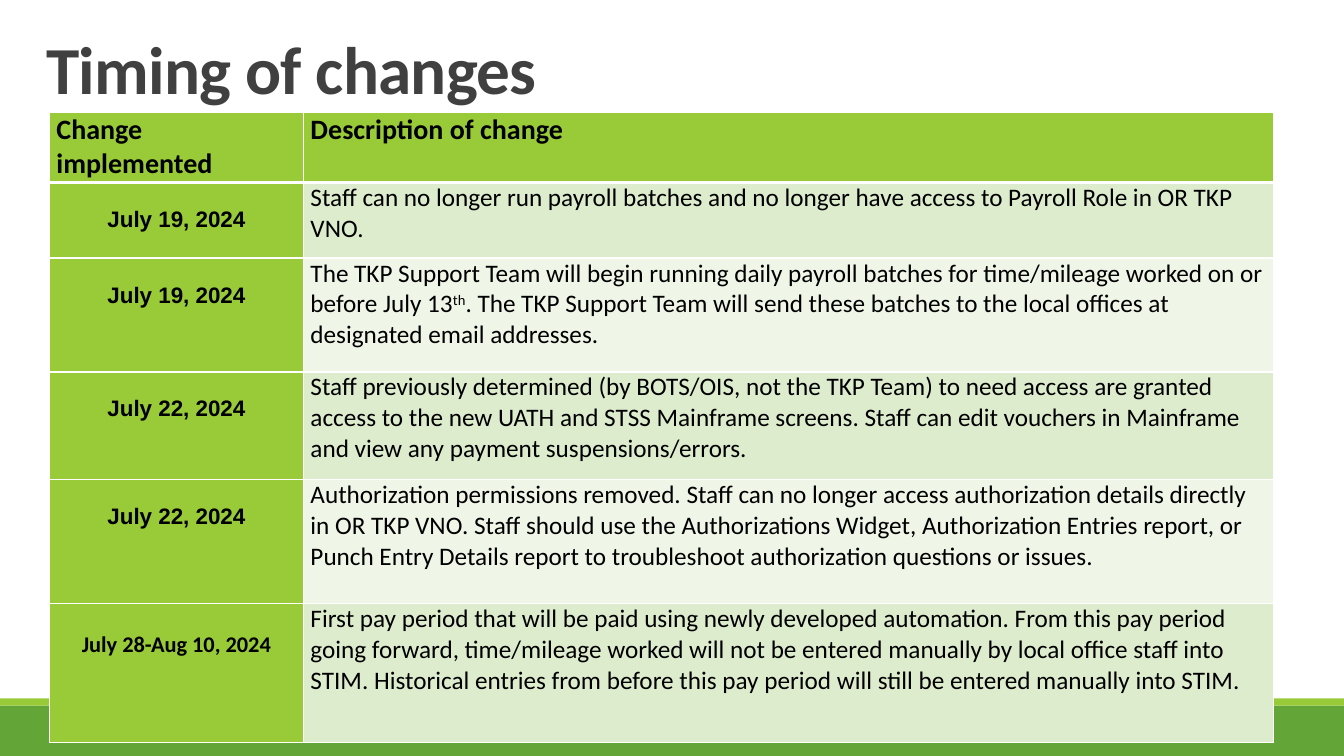
from lxml import etree
from pptx import Presentation
from pptx.dml.color import RGBColor as Rgb
from pptx.enum.shapes import MSO_SHAPE as Shape
from pptx.enum.text import MSO_ANCHOR as Anchor, PP_ALIGN as Align
from pptx.oxml.ns import qn
from pptx.util import Inches, Pt

WIDE, HIGH = 13.33, 7.5
HUES = {
    "lime": "99CB38", "green": "63A537", "pale": "DEECCE", "mist": "EFF6E8",
    "white": "FFFFFF", "black": "000000", "gray": "404040",
}
COLS = [2.52, 9.62]
ROWS = [0.69, 0.75, 1.13, 1.07, 1.23, 1.38]
HEADS = ["Change implemented", "Description of change"]
STEPS = [
    ("July 19, 2024", "Arial", [
        "Staff can no longer run payroll batches and no longer have access to "
        "Payroll Role in OR TKP VNO."]),
    ("July 19, 2024", "Arial", [
        "The TKP Support Team will begin running daily payroll batches for "
        "time/mileage worked on or before July 13",
        "th",
        ". The TKP Support Team will send these batches to the local offices "
        "at designated email addresses."]),
    ("July 22, 2024", "Arial", [
        "Staff previously determined (by BOTS/OIS, not the TKP Team) to need "
        "access are granted access to the new UATH and STSS Mainframe screens. "
        "Staff can edit vouchers in Mainframe and view any payment "
        "suspensions/errors."]),
    ("July 22, 2024", "Arial", [
        "Authorization permissions removed. Staff can no longer access "
        "authorization details directly in OR TKP VNO. Staff should use the "
        "Authorizations Widget, Authorization Entries report, or Punch Entry "
        "Details report to troubleshoot authorization questions or issues."]),
    ("July 28-Aug 10, 2024", "Calibri", [
        "First pay period that will be paid using newly developed automation. "
        "From this pay period going forward, time/mileage worked will not be "
        "entered manually by local office staff into STIM. Historical entries "
        "from before this pay period will still be entered manually into STIM."]),
]


def hue(name):
    return Rgb.from_string(HUES[name])


def place(box):
    return [Inches(n) for n in box]


def say(par, text, size, bold=False, face="Calibri", tone="black"):
    run = par.add_run()
    run.text = text
    font = run.font
    font.size, font.bold, font.name = Pt(size), bold, face
    font.color.rgb = hue(tone)
    return run


def add_band(slide, box, tone):
    band = slide.shapes.add_shape(Shape.RECTANGLE, *place(box))
    band.shadow.inherit = False
    band.fill.solid()
    band.fill.fore_color.rgb = hue(tone)
    band.line.fill.background()


def add_foot(slide, box):
    left, top, width, height = box
    edge = 0.07
    add_band(slide, (left, top + edge, width, height - edge), "green")
    add_band(slide, (left, top, width, edge), "lime")


def add_title(slide, box):
    frame = slide.shapes.add_textbox(*place(box)).text_frame
    frame.word_wrap = True
    frame.vertical_anchor = Anchor.BOTTOM
    par = frame.paragraphs[0]
    par.line_spacing = 0.85
    run = say(par, "Timing of changes", 48, True, tone="gray")
    run.font._element.set("spc", "-50")


def set_edges(cell, head):
    props = cell._tc.get_or_add_tcPr()
    for spot, side in enumerate("LRTB"):
        width = Pt(3 if head and side == "B" else 1)
        line = etree.Element(qn("a:ln" + side), w=str(width))
        fill = etree.SubElement(line, qn("a:solidFill"))
        etree.SubElement(fill, qn("a:srgbClr"), val=HUES["white"])
        props.insert(spot, line)


def set_cell(cell, tone, head=False):
    cell.margin_left = cell.margin_right = Inches(0.07)
    cell.margin_top = cell.margin_bottom = 0
    cell.fill.solid()
    cell.fill.fore_color.rgb = hue(tone)
    set_edges(cell, head)
    return cell.text_frame.paragraphs[0]


def add_steps(slide, box):
    grid = slide.shapes.add_table(len(ROWS), len(COLS), *place(box)).table
    for col, width in zip(grid.columns, COLS):
        col.width = Inches(width)
    for row, height in zip(grid.rows, ROWS):
        row.height = Inches(height)
    for col, text in enumerate(HEADS):
        say(set_cell(grid.cell(0, col), "lime", True), text, 20, True)
    for row, (date, face, parts) in enumerate(STEPS, 1):
        par = set_cell(grid.cell(row, 0), "lime")
        par.alignment = Align.CENTER
        par.line_spacing = 2.0
        say(par, date, 16, True, face)
        par = set_cell(grid.cell(row, 1), "pale" if row % 2 else "mist")
        for part in parts:
            run = say(par, part, 18)
            if part == "th":
                run.font._element.set("baseline", "30000")


def main():
    deck = Presentation()
    deck.slide_width, deck.slide_height = Inches(WIDE), Inches(HIGH)
    slide = deck.slides.add_slide(deck.slide_layouts[6])
    add_foot(slide, (0, 6.93, WIDE, HIGH - 6.93))
    add_title(slide, (0.36, 0.31, 11.84, 0.81))
    add_steps(slide, (0.49, 1.12, sum(COLS), sum(ROWS)))
    deck.save("out.pptx")


if __name__ == "__main__":
    main()
